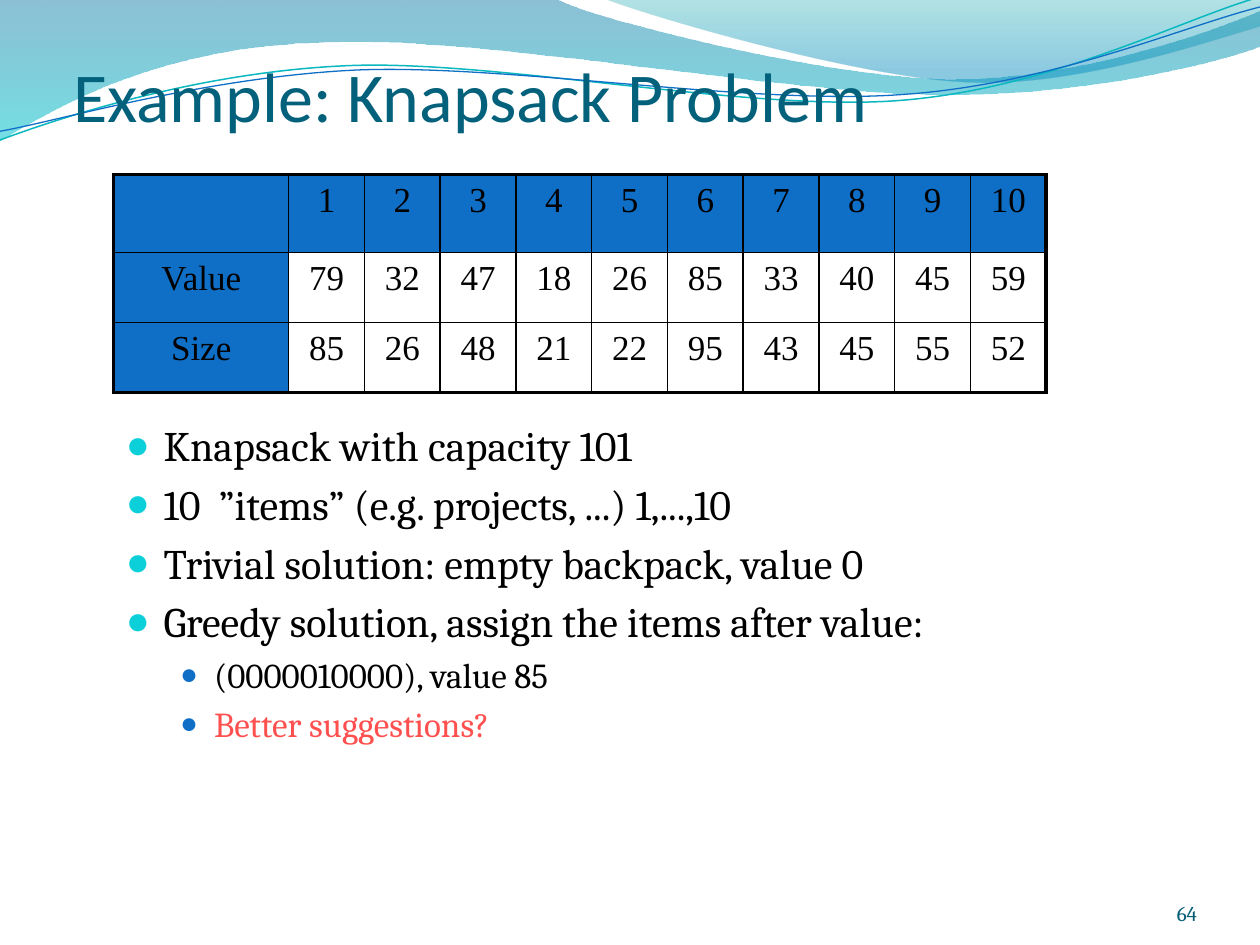
import math

import pptx
import pptx.util
import pptx.dml.color
import pptx.enum.text
import pptx.oxml
import pptx.oxml.ns
from lxml import etree

Pt = pptx.util.Pt
RGB = pptx.dml.color.RGBColor
ALIGN = pptx.enum.text.PP_ALIGN
ANCHOR = pptx.enum.text.MSO_ANCHOR
qn = pptx.oxml.ns.qn

BLACK = RGB(0, 0, 0)
BLUE = RGB(0x0F, 0x6F, 0xC6)
CYAN = RGB(0x0B, 0xD0, 0xD9)
TEAL = RGB(0x0A, 0xB8, 0xBF)
RED = RGB(0xFF, 0x50, 0x50)
NAVY = RGB(0x04, 0x61, 0x7B)
INK = RGB(0x04, 0x5D, 0x75)

TITLE = "Example: Knapsack Problem"
NUMBER = "64"
ITEMS = [
    (0, "Knapsack with capacity 101", BLACK),
    (0, "10  ”items” (e.g. projects, ...) 1,...,10", BLACK),
    (0, "Trivial solution: empty backpack, value 0", BLACK),
    (0, "Greedy solution, assign the items after value:", BLACK),
    (1, "(0000010000), value 85", BLACK),
    (1, "Better suggestions?", RED),
]
LEVELS = [
    dict(size=24, left=21.6, hang=21.6, color=CYAN, scale=95),
    dict(size=20, left=50.4, hang=19.4, color=BLUE, scale=85),
]
GRID = [
    ["", *range(1, 11)],
    ["Value", 79, 32, 47, 18, 26, 85, 33, 40, 45, 59],
    ["Size", 85, 26, 48, 21, 22, 95, 43, 45, 55, 52],
]
HEIGHTS = [44.5, 40, 40]
WIDTHS = [100] + [43.3] * 10
THIN, THICK = 1, 2.25

BANDS = [
    ([[(0, 0)], [(317, -1)],
      [(343, 12), (478, 45), (546, 45)], [(614, 45), (690, 19), (720, 6)],
      [(721, 26)], [(708, 32), (626, 55), (537, 54)],
      [(448, 54), (275, 20), (185, 24)], [(93, 26), (33, 60), (-1, 81)]],
     [(0, RGB(0, 0x74, 0xA1), 45), (1, RGB(0, 0xC6, 0xCF), 55)]),
    ([[(345, -1)], [(367, 8), (491, 45), (554, 47)],
      [(615, 50), (692, 23), (720, 15)], [(720, 0)]],
     [(0, RGB(0, 0xA1, 0xA9), 30), (0.8, RGB(0, 0x8B, 0xBF), 45)]),
]
CURVES = [
    ([[(0, 80)], [(35, 67), (114, 41), (199, 37.5)],
      [(284, 34), (427, 64), (513, 57.5)], [(600, 51), (675, 11), (719, -1.5)]],
     TEAL, 0.85),
    ([[(0, 75)], [(34, 69), (118, 44), (204, 40)],
      [(290, 36.5), (430, 60.5), (516, 54)], [(602, 48), (676, 15), (720, 4)]],
     BLUE, 0.75),
]
TILT = 2.7
PIVOT = (359.5, 42)


def turn(dot):
    x, y = dot[0] - PIVOT[0], dot[1] - PIVOT[1]
    cos, sin = math.cos(math.radians(TILT)), math.sin(math.radians(TILT))
    return PIVOT[0] + x * cos - y * sin, PIVOT[1] + x * sin + y * cos


def draw(slide, parts, close):
    dots = [(Pt(x), Pt(y)) for part in parts for x, y in part]
    pen = slide.shapes.build_freeform(*dots[0], scale=1.0)
    pen.add_line_segments(dots[1:], close=close)
    shape = pen.convert_to_shape()
    shape.shadow.inherit = False
    lines = iter(list(shape._element.iter(qn("a:lnTo"))))
    for part in parts[1:]:
        group = [next(lines) for _ in part]
        if len(group) == 3:
            bend = etree.Element(qn("a:cubicBezTo"))
            group[0].addprevious(bend)
            for line in group:
                bend.append(line[0])
                line.getparent().remove(line)
    return shape


def add_band(slide, parts, stops):
    shape = draw(slide, parts, True)
    shape.line.fill.background()
    shape.fill.gradient()
    shape.fill.gradient_angle = 270
    for stop, (place, color, _) in zip(shape.fill.gradient_stops, stops):
        stop.position = place
        stop.color.rgb = color
    tints = shape._element.spPr.iter(qn("a:srgbClr"))
    for tint, (_, _, alpha) in zip(list(tints), stops):
        etree.SubElement(tint, qn("a:alpha"), val=str(alpha * 1000))


def add_curve(slide, parts, color, width):
    shape = draw(slide, [[turn(dot) for dot in part] for part in parts], False)
    shape.rotation = 360 - TILT
    shape.fill.background()
    shape.line.color.rgb = color
    shape.line.width = Pt(width)


def style(para, font, size, color):
    for run in para.runs:
        run.font.name = font
        run.font.size = Pt(size)
        run.font.color.rgb = color


def add_box(slide, place, insets, anchor):
    frame = slide.shapes.add_textbox(*map(Pt, place)).text_frame
    frame.word_wrap = True
    frame.vertical_anchor = anchor
    (frame.margin_left, frame.margin_top,
     frame.margin_right, frame.margin_bottom) = map(Pt, insets)
    return frame


def add_gap(para):
    gap = etree.SubElement(para._p.get_or_add_pPr(), qn("a:spcBef"))
    etree.SubElement(gap, qn("a:spcPct"), val="20000")


def add_bullet(para, left, hang, color, scale):
    add_gap(para)
    props = para._p.get_or_add_pPr()
    props.set("marL", str(Pt(left)))
    props.set("indent", str(-Pt(hang)))
    tint = etree.SubElement(props, qn("a:buClr"))
    etree.SubElement(tint, qn("a:srgbClr"), val=str(color))
    etree.SubElement(props, qn("a:buSzPct"), val=str(scale * 1000))
    etree.SubElement(props, qn("a:buFont"), typeface="Times New Roman")
    etree.SubElement(props, qn("a:buChar"), char="●")


def add_list(slide):
    frame = add_box(slide, (64.8, 236.2, 567.4, 221.8), (7.2, 3.6, 7.2, 3.6), ANCHOR.TOP)
    frame.text = "\n".join(text for _, text, _ in ITEMS)
    for para, (level, _, color) in zip(frame.paragraphs, ITEMS):
        look = dict(LEVELS[level])
        style(para, "Cambria", look.pop("size"), color)
        para.level = level
        add_bullet(para, **look)


def add_edges(cell, widths):
    props = cell._tc.get_or_add_tcPr()
    for side, width in zip("LRTB", widths):
        line = etree.SubElement(props, qn("a:ln" + side), w=str(Pt(width)))
        fill = etree.SubElement(line, qn("a:solidFill"))
        etree.SubElement(fill, qn("a:srgbClr"), val=str(BLACK))


def add_grid(slide):
    rows, cols = len(GRID), len(GRID[0])
    place = (65, 99.8, sum(WIDTHS), sum(HEIGHTS))
    table = slide.shapes.add_table(rows, cols, *map(Pt, place)).table
    table.first_row = table.horz_banding = False
    for col, width in zip(table.columns, WIDTHS):
        col.width = Pt(width)
    for r, (row, height) in enumerate(zip(GRID, HEIGHTS)):
        table.rows[r].height = Pt(height)
        for c, value in enumerate(row):
            cell = table.cell(r, c)
            outer = (c == 0, c == cols - 1, r == 0, r == rows - 1)
            add_edges(cell, [THICK if edge else THIN for edge in outer])
            if r == 0 or c == 0:
                cell.fill.solid()
                cell.fill.fore_color.rgb = BLUE
            else:
                cell.fill.background()
            cell.text_frame.text = str(value)
            para = cell.text_frame.paragraphs[0]
            para.alignment = ALIGN.CENTER
            add_gap(para)
            style(para, "Times New Roman", 20, BLACK)


deck = pptx.Presentation()
deck.slide_width, deck.slide_height = Pt(720), Pt(540)
slide = deck.slides.add_slide(deck.slide_layouts[6])
for band in BANDS:
    add_band(slide, *band)
for curve in CURVES:
    add_curve(slide, *curve)
title = add_box(slide, (41.8, -12.2, 648, 90), (0, 3.6, 0, 0), ANCHOR.BOTTOM)
title.text = TITLE
style(title.paragraphs[0], "Calibri", 40, NAVY)
add_list(slide)
add_grid(slide)
number = add_box(slide, (624.2, 500.4, 59.8, 28.8), (0, 0, 0, 0), ANCHOR.BOTTOM)
number.text = NUMBER
number.paragraphs[0].alignment = ALIGN.RIGHT
style(number.paragraphs[0], "Cambria", 12, INK)
deck.save("out.pptx")
